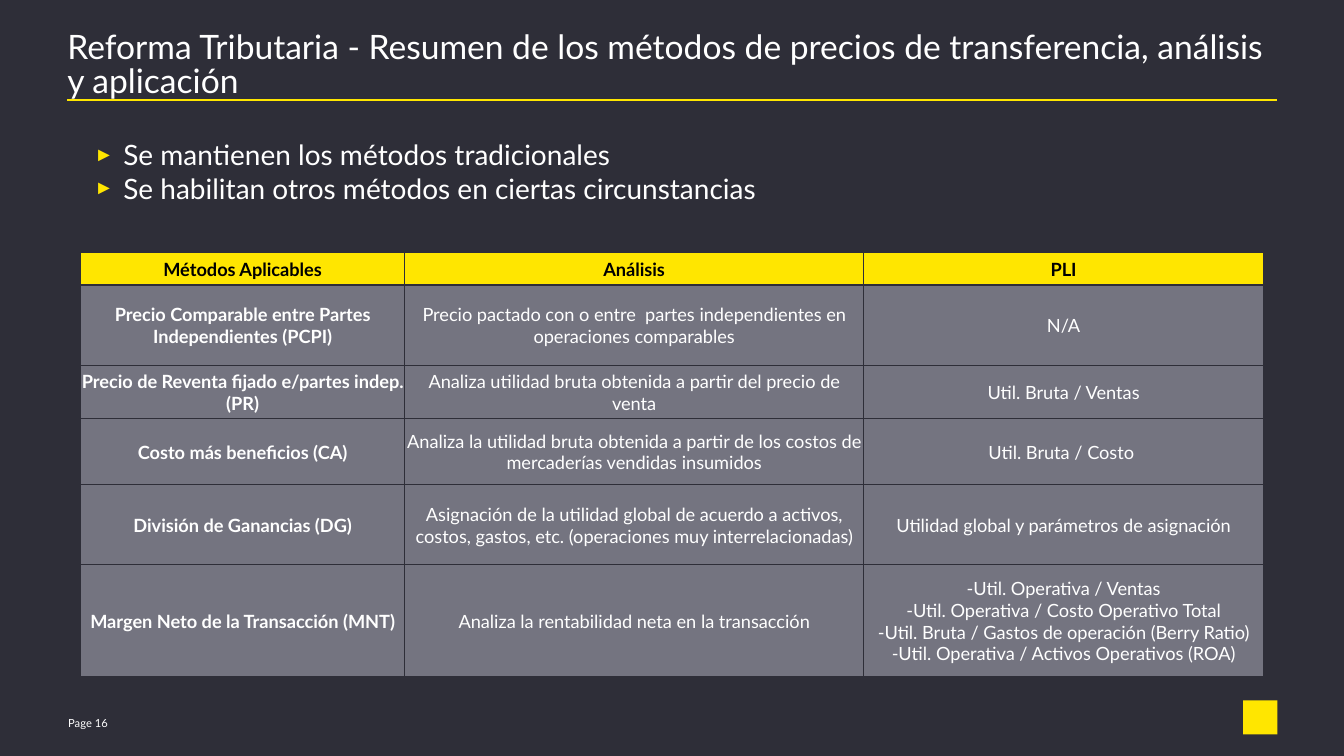
from lxml.etree import SubElement
from pptx import Presentation
from pptx.dml.color import RGBColor
from pptx.enum.shapes import MSO_CONNECTOR, MSO_SHAPE
from pptx.enum.text import MSO_ANCHOR, PP_ALIGN
from pptx.oxml.ns import qn
from pptx.util import Cm, Pt

TITLE = "Reforma Tributaria - Resumen de los métodos de precios de transferencia, análisis y aplicación"
POINTS = ["Se mantienen los métodos tradicionales",
          "Se habilitan otros métodos en ciertas circunstancias"]
PAGE = "Page 16"
METHODS = [
    ("Métodos Aplicables", "Análisis", "PLI"),
    ("Precio Comparable entre Partes Independientes (PCPI)",
     "Precio pactado con o entre  partes independientes en\noperaciones comparables",
     "N/A"),
    ("Precio de Reventa fijado e/partes indep. (PR)",
     "Analiza utilidad bruta obtenida a partir del precio de venta",
     "Util. Bruta / Ventas"),
    ("Costo más beneficios (CA)",
     "Analiza la utilidad bruta obtenida a partir de los costos de mercaderías vendidas insumidos",
     "Util. Bruta / Costo "),
    ("División de Ganancias (DG)",
     "Asignación de la utilidad global de acuerdo a activos, costos, gastos, etc. "
     "(operaciones muy interrelacionadas)",
     "Utilidad global y parámetros de asignación"),
    ("Margen Neto de la Transacción (MNT)",
     "Analiza la rentabilidad neta en la transacción",
     "-Util. Operativa / Ventas\n-Util. Operativa / Costo Operativo Total\n"
     "-Util. Bruta / Gastos de operación (Berry Ratio)\n"
     "-Util. Operativa / Activos Operativos (ROA)"),
]
COLUMN_WIDTHS = [8.17, 11.57, 10.08]
ROW_HEIGHTS = [0.83, 2.02, 1.35, 1.65, 2.03, 2.81]
DARK, YELLOW, GREY, WHITE, BLACK = "2E2E38", "FFE600", "747480", "FFFFFF", "000000"
FONT = "Lato"
CELL_FORMAT = {"margin_left": Cm(0.03), "margin_right": Cm(0.03), "margin_top": Cm(0.03),
               "margin_bottom": 0, "vertical_anchor": MSO_ANCHOR.MIDDLE}
BOX_FORMAT = {"margin_left": 0, "margin_right": 0, "margin_top": 0,
              "margin_bottom": 0, "word_wrap": True}


def apply(target, values):
    for name, value in values.items():
        setattr(target, name, value)


def paint(color_format, color):
    color_format.rgb = RGBColor.from_string(color)


def fill_with(fill, color):
    fill.solid()
    paint(fill.fore_color, color)


def write(paragraph, text, size, color=WHITE, bold=False):
    paragraph.text = text
    for run in paragraph.runs:
        apply(run.font, {"name": FONT, "size": Pt(size), "bold": bold})
        paint(run.font.color, color)


def add_text(slide, place, lines, size, **box_format):
    frame = slide.shapes.add_textbox(*map(Cm, place)).text_frame
    apply(frame, BOX_FORMAT | box_format)
    for index, line in enumerate(lines):
        paragraph = frame.add_paragraph() if index else frame.paragraphs[0]
        write(paragraph, line, size)
    return frame.paragraphs


def add_bullet(paragraph):
    properties = paragraph._p.get_or_add_pPr()
    properties.set("marL", str(Cm(0.73)))
    properties.set("indent", str(-Cm(0.73)))
    SubElement(SubElement(properties, qn("a:buClr")), qn("a:srgbClr"), val=YELLOW)
    SubElement(properties, qn("a:buSzPct"), val="70000")
    SubElement(properties, qn("a:buFont"), typeface="Arial")
    SubElement(properties, qn("a:buChar"), char="►")


def add_borders(cell):
    properties = cell._tc.get_or_add_tcPr()
    for side in ("lnL", "lnR", "lnT", "lnB"):
        border = SubElement(properties, qn("a:" + side), w=str(Pt(1)))
        SubElement(SubElement(border, qn("a:solidFill")), qn("a:srgbClr"), val=DARK)


def add_methods(slide, left, top):
    size = Cm(sum(COLUMN_WIDTHS)), Cm(sum(ROW_HEIGHTS))
    table = slide.shapes.add_table(len(METHODS), len(COLUMN_WIDTHS), Cm(left), Cm(top), *size).table
    for column, width in zip(table.columns, COLUMN_WIDTHS):
        column.width = Cm(width)
    for row, height in zip(table.rows, ROW_HEIGHTS):
        row.height = Cm(height)
    for r, method in enumerate(METHODS):
        for c, text in enumerate(method):
            cell = table.cell(r, c)
            apply(cell, CELL_FORMAT)
            add_borders(cell)
            fill_with(cell.fill, GREY if r else YELLOW)
            paragraph = cell.text_frame.paragraphs[0]
            paragraph.alignment = PP_ALIGN.CENTER
            write(paragraph, text, 13, WHITE if r else BLACK, r == 0 or c == 0)


def main():
    """Build the slide on transfer pricing methods."""
    deck = Presentation()
    apply(deck, {"slide_width": Cm(33.88), "slide_height": Cm(19.05)})
    slide = deck.slides.add_slide(deck.slide_layouts[6])
    fill_with(slide.background.fill, DARK)

    emblem = slide.shapes.add_shape(MSO_SHAPE.RECTANGLE, Cm(31.34), Cm(17.65), Cm(0.86), Cm(0.86))
    emblem.shadow.inherit = False
    fill_with(emblem.fill, YELLOW)
    emblem.line.fill.background()

    rule = slide.shapes.add_connector(MSO_CONNECTOR.STRAIGHT, Cm(1.7), Cm(2.52), Cm(32.18), Cm(2.52))
    rule.line.width = Pt(1.5)
    paint(rule.line.color, YELLOW)
    SubElement(rule._element.spPr, qn("a:effectLst"))

    title = add_text(slide, (1.7, 0.81, 30.5, 1.65), [TITLE], 24)
    title[0].line_spacing = 0.85
    add_text(slide, (1.72, 17.96, 1.85, 0.51), [PAGE], 8, vertical_anchor=MSO_ANCHOR.MIDDLE)
    add_methods(slide, 2.03, 6.35)
    for point in add_text(slide, (2.38, 3.37, 21.29, 1.8), POINTS, 20, margin_top=Cm(0.1)):
        add_bullet(point)
    deck.save("out.pptx")


if __name__ == "__main__":
    main()
